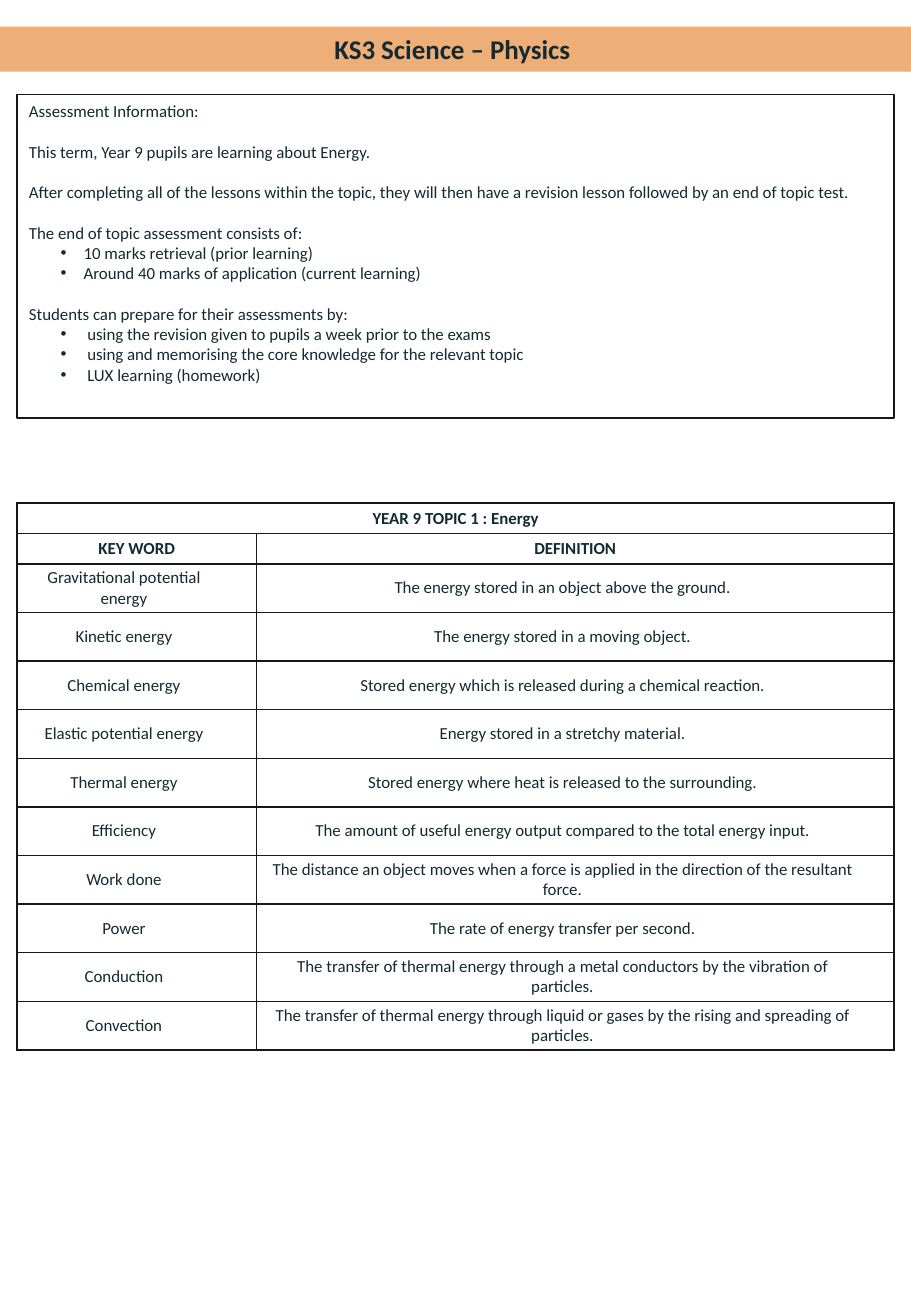
from lxml import etree
from pptx import Presentation
from pptx.dml.color import RGBColor
from pptx.enum.shapes import MSO_SHAPE
from pptx.enum.text import MSO_ANCHOR, MSO_AUTO_SIZE, PP_ALIGN
from pptx.oxml.ns import qn
from pptx.util import Inches, Pt

RECTANGLE = MSO_SHAPE.RECTANGLE
TOP, MIDDLE = MSO_ANCHOR.TOP, MSO_ANCHOR.MIDDLE
LEFT, CENTER = PP_ALIGN.LEFT, PP_ALIGN.CENTER
FIXED = MSO_AUTO_SIZE.NONE

WIDTH, HEIGHT = 7.5, 10.83
MARGIN = 0.14
CONTENT_WIDTH = WIDTH - 2 * MARGIN
KEY_WORD_WIDTH = 1.97
HEADER_ROW, WORD_ROW = 0.25, 0.4
INK, LINE, BAND = "142A33", "181717", "EDAF77"
FONT = "Calibri"
BLANK_LINE = 12

ASSESSMENT = [
    ("Assessment Information:", []),
    ("This term, Year 9 pupils are learning about Energy.", []),
    ("After completing all of the lessons within the topic, they will then have "
     "a revision lesson followed by an end of topic test.", []),
    ("The end of topic assessment consists of:", [
        "10 marks retrieval (prior learning)",
        "Around 40 marks of application (current learning)",
    ]),
    ("Students can prepare for their assessments by:", [
        "using the revision given to pupils a week prior to the exams",
        "using and memorising the core knowledge for the relevant topic",
        "LUX learning (homework)",
    ]),
]

TOPIC = "YEAR 9 TOPIC 1 : Energy"
HEADINGS = ("KEY WORD", "DEFINITION")
KEY_WORDS = [
    ("Gravitational potential energy", "The energy stored in an object above the ground."),
    ("Kinetic energy", "The energy stored in a moving object."),
    ("Chemical energy", "Stored energy which is released during a chemical reaction."),
    ("Elastic potential energy", "Energy stored in a stretchy material."),
    ("Thermal energy", "Stored energy where heat is released to the surrounding."),
    ("Efficiency", "The amount of useful energy output compared to the total energy input."),
    ("Work done", "The distance an object moves when a force is applied in the direction "
                  "of the resultant force."),
    ("Power", "The rate of energy transfer per second."),
    ("Conduction", "The transfer of thermal energy through a metal conductors by the "
                   "vibration of particles."),
    ("Convection", "The transfer of thermal energy through liquid or gases by the rising "
                   "and spreading of particles."),
]


def color(value):
    return RGBColor.from_string(value)


def format_paragraph(paragraph, size=10, bold=False, align=LEFT):
    paragraph.alignment = align
    for span in paragraph.runs:
        span.font.name = FONT
        span.font.size = Pt(size)
        span.font.bold = bold
        span.font.color.rgb = color(INK)


def set_margins(holder, left, top, right, bottom):
    holder.margin_left, holder.margin_top = Inches(left), Inches(top)
    holder.margin_right, holder.margin_bottom = Inches(right), Inches(bottom)


def add_bullet(paragraph, indent, hanging):
    properties = paragraph._p.get_or_add_pPr()
    properties.set("marL", str(Inches(indent)))
    properties.set("indent", str(-Inches(hanging)))
    etree.SubElement(properties, qn("a:buFont"), typeface="Arial")
    etree.SubElement(properties, qn("a:buChar"), char="•")


def add_borders(cell):
    properties = cell._tc.get_or_add_tcPr()
    for side in ("a:lnL", "a:lnR", "a:lnT", "a:lnB"):
        border = etree.SubElement(properties, qn(side), w=str(Pt(1)))
        fill = etree.SubElement(border, qn("a:solidFill"))
        etree.SubElement(fill, qn("a:srgbClr"), val=LINE)


def place_title(page, text):
    title = page.shapes.title
    title.left, title.top = 0, Inches(0.22)
    title.width, title.height = Inches(WIDTH), Inches(0.37)
    title.fill.solid()
    title.fill.fore_color.rgb = color(BAND)
    frame = title.text_frame
    frame.text = text
    frame.auto_size = FIXED
    frame.vertical_anchor = MIDDLE
    set_margins(frame, 0.1, 0.05, 0.15, 0.05)
    format_paragraph(frame.paragraphs[0], 16, True, CENTER)


def add_assessment_box(page):
    box = page.shapes.add_shape(RECTANGLE, Inches(MARGIN), Inches(0.78),
                                Inches(CONTENT_WIDTH), Inches(2.66))
    box.shadow.inherit = False
    box.fill.background()
    box.line.color.rgb = color(LINE)
    box.line.width = Pt(0.75)
    frame = box.text_frame
    frame.word_wrap = True
    frame.vertical_anchor = TOP
    for number, (statement, points) in enumerate(ASSESSMENT):
        paragraph = frame.add_paragraph() if number else frame.paragraphs[0]
        paragraph.text = statement
        if number:
            paragraph.space_before = Pt(BLANK_LINE)
        format_paragraph(paragraph)
        indent, hanging = (0.45, 0.19) if number == 3 else (0.48, 0.22)
        for point in points:
            paragraph = frame.add_paragraph()
            paragraph.text = point
            add_bullet(paragraph, indent, hanging)
            format_paragraph(paragraph)


def fill_cell(cell, text, heading):
    cell.text = text
    cell.vertical_anchor = MIDDLE
    if heading:
        set_margins(cell, 0.08, 0.04, 0.08, 0.04)
    else:
        set_margins(cell, 0.07, 0, 0.28, 0)
    format_paragraph(cell.text_frame.paragraphs[0], bold=heading, align=CENTER)


def add_key_word_table(page):
    rows = [(TOPIC, ""), HEADINGS] + KEY_WORDS
    heights = [HEADER_ROW] * 2 + [WORD_ROW] * len(KEY_WORDS)
    table = page.shapes.add_table(len(rows), 2, Inches(MARGIN), Inches(4.14),
                                  Inches(CONTENT_WIDTH), Inches(sum(heights))).table
    table.columns[0].width = Inches(KEY_WORD_WIDTH)
    table.columns[1].width = Inches(CONTENT_WIDTH - KEY_WORD_WIDTH)
    table.cell(0, 0).merge(table.cell(0, 1))
    for row, (texts, height) in enumerate(zip(rows, heights)):
        table.rows[row].height = Inches(height)
        for column, text in enumerate(texts):
            cell = table.cell(row, column)
            add_borders(cell)
            cell.fill.background()
            if not cell.is_spanned:
                fill_cell(cell, text, row < 2)


def main():
    deck = Presentation()
    deck.slide_width, deck.slide_height = Inches(WIDTH), Inches(HEIGHT)
    page = deck.slides.add_slide(deck.slide_layouts.get_by_name("Title Only"))
    place_title(page, "KS3 Science – Physics")
    add_assessment_box(page)
    add_key_word_table(page)
    deck.save("out.pptx")


if __name__ == "__main__":
    main()
